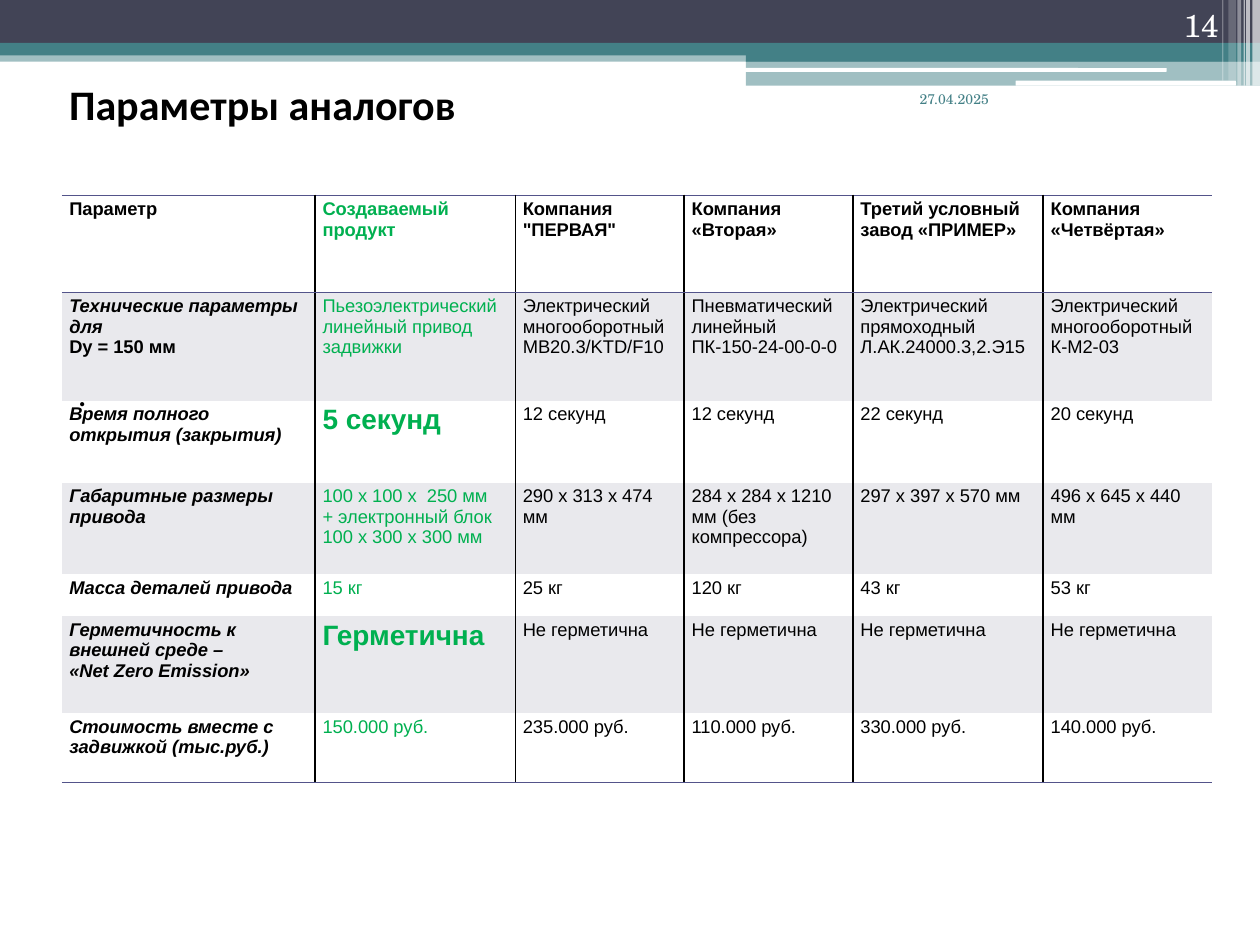
import pptx
import pptx.util
import pptx.dml.color
import pptx.enum.shapes
import pptx.enum.text
import pptx.oxml.ns
import lxml.etree
from dataclasses import dataclass

Inches, Pt = pptx.util.Inches, pptx.util.Pt
Kind = pptx.enum.shapes.MSO_SHAPE
Anchor = pptx.enum.text.MSO_ANCHOR
Align = pptx.enum.text.PP_ALIGN
qn = pptx.oxml.ns.qn


@dataclass
class Theme:
    dark: str = "424456"
    teal: str = "438086"
    white: str = "FFFFFF"
    black: str = "000000"
    green: str = "00B050"
    rule: str = "53548A"
    band: str = "E9E9ED"
    title: float = 24
    body: float = 20
    page: float = 18
    big: float = 16
    cell: float = 10.5
    date: float = 8
    head: str = "Calibri"
    sans: str = "Arial"
    serif: str = "TeX Gyre Schola"


def rgb(color):
    return pptx.dml.color.RGBColor.from_string(color)


class Deck:
    def __init__(self, slide, theme):
        self.slide, self.theme = slide, theme

    def style(self, para, face, size, color, bold=False, slant=False):
        font = para.font
        font.name, font.size = face, Pt(size)
        font.bold, font.italic = bold, slant
        font.color.rgb = rgb(color)

    def bar(self, box, color, alpha=100, kind=Kind.RECTANGLE):
        shape = self.slide.shapes.add_shape(kind, *map(Inches, box))
        shape.shadow.inherit = False
        shape.fill.solid()
        shape.fill.fore_color.rgb = rgb(color)
        shape.line.fill.background()
        if alpha < 100:
            tone = shape.fill._xPr.find(".//" + qn("a:srgbClr"))
            lxml.etree.SubElement(tone, qn("a:alpha"), val=str(alpha * 1000))

    def text(self, box, words, face, size, color, bold=False,
             anchor=Anchor.TOP, align=Align.LEFT, before=0):
        frame = self.slide.shapes.add_textbox(*map(Inches, box)).text_frame
        frame.word_wrap = True
        frame.vertical_anchor = anchor
        para = frame.paragraphs[0]
        para.text, para.alignment = words, align
        para.space_before = Pt(before)
        self.style(para, face, size, color, bold)

    def edges(self, cell, colors):
        """Draw the left, right, top and bottom borders; None hides one."""
        props = cell._tc.get_or_add_tcPr()
        for spot, (side, color) in enumerate(zip("LRTB", colors)):
            line = lxml.etree.Element(qn("a:ln" + side), w=str(Pt(1)))
            if color:
                fill = lxml.etree.SubElement(line, qn("a:solidFill"))
                lxml.etree.SubElement(fill, qn("a:srgbClr"), val=color)
            else:
                lxml.etree.SubElement(line, qn("a:noFill"))
            props.insert(spot, line)

    def table(self, left, top, wide, high, rows):
        t = self.theme
        frame = self.slide.shapes.add_table(
            len(rows), len(wide), Inches(left), Inches(top),
            Inches(sum(wide)), Inches(sum(high)))
        grid = frame.table
        grid.first_row = grid.horz_banding = False
        for col, size in zip(grid.columns, wide):
            col.width = Inches(size)
        for row, size in zip(grid.rows, high):
            row.height = Inches(size)
        for i, row in enumerate(rows):
            for j, words in enumerate(row):
                cell = grid.cell(i, j)
                cell.margin_left = cell.margin_right = Inches(0.06)
                cell.margin_top = cell.margin_bottom = Inches(0.03)
                if i % 2:
                    cell.fill.solid()
                    cell.fill.fore_color.rgb = rgb(t.band)
                else:
                    cell.fill.background()
                self.edges(cell, (
                    t.black if j else None,
                    t.black if j < len(wide) - 1 else None,
                    t.rule if i < 2 else None,
                    t.rule if i in (0, len(rows) - 1) else None))
                para = cell.text_frame.paragraphs[0]
                para.text = words
                key = j == 1 and i in (2, 5)
                self.style(para, t.sans, t.big if key else t.cell,
                           t.green if j == 1 else t.black,
                           bold=i == 0 or j == 0 or key,
                           slant=i > 0 and j == 0)
        return grid


ROWS = [
    ["Параметр", "Создаваемый продукт", "Компания \"ПЕРВАЯ\"",
     "Компания «Вторая»", "Третий условный завод «ПРИМЕР»",
     "Компания «Четвёртая»"],
    ["Технические параметры для \nDy = 150 мм",
     "Пьезоэлектрический линейный привод задвижки",
     "Электрический многооборотный MB20.3/KTD/F10",
     "Пневматический линейный \nПК-150-24-00-0-0",
     "Электрический  прямоходный Л.АК.24000.3,2.Э15",
     "Электрический многооборотный\nК-М2-03"],
    ["Время полного открытия (закрытия)", "5 секунд", "12 секунд",
     "12 секунд", "22 секунд", "20 секунд"],
    ["Габаритные размеры привода",
     "100 х 100 х  250 мм \n+ электронный блок 100 х 300 х 300 мм",
     "290 х 313 х 474 мм", "284 x 284 x 1210 мм (без компрессора)",
     "297 х 397 х 570 мм", "496 х 645 х 440 мм"],
    ["Масса деталей привода", "15 кг", "25 кг", "120 кг", "43 кг", "53 кг"],
    ["Герметичность к внешней среде – \n«Net Zero Emission»",
     "Герметична"] + ["Не герметична"] * 4,
    ["Стоимость вместе с задвижкой (тыс.руб.)", "150.000 руб.",
     "235.000 руб.", "110.000 руб.", "330.000 руб.", "140.000 руб."],
]


def main():
    prs = pptx.Presentation()
    prs.slide_width, prs.slide_height = Inches(10), Inches(7.5)
    t = Theme()
    deck = Deck(prs.slides.add_slide(prs.slide_layouts[6]), t)

    # Header bands
    deck.bar((0, 0.4, 10, 0.09), t.teal, 50)
    deck.bar((0, 0, 10, 0.34), t.dark)
    deck.bar((0, 0.34, 10, 0.1), t.teal)
    deck.bar((5.92, 0.39, 4.08, 0.1), t.teal)
    deck.bar((5.92, 0.48, 4.08, 0.2), t.teal, 50)
    for box in ((5.91, 0.54, 3.35, 0.03), (8.06, 0.64, 1.75, 0.04)):
        deck.bar(box, t.white, kind=Kind.ROUNDED_RECTANGLE)

    # Pale stripes at the right edge
    for left, wide, high, alpha in (
            (9.94, 0.06, 0.68, 65), (9.89, 0.03, 0.68, 65),
            (9.87, 0.01, 0.68, 60), (9.82, 0.03, 0.68, 40),
            (9.75, 0.06, 0.64, 20), (9.7, 0.01, 0.64, 30)):
        deck.bar((left, 0, wide, high), t.white, alpha)

    # Title, body, date and page number
    deck.text((0.45, 0.59, 3.52, 0.47), "Параметры аналогов", t.head,
              t.title, t.black, bold=True, anchor=Anchor.MIDDLE)
    deck.text((0.52, 2.9, 5.15, 2.5), ".", t.head, t.body, t.black, before=3)
    deck.text((7.2, 0.67, 1.05, 0.5), "27.04.2025", t.serif, t.date, t.teal)
    deck.text((8.94, 0, 0.83, 0.4), "14", t.serif, t.page, t.white,
              anchor=Anchor.BOTTOM, align=Align.RIGHT)

    # Comparison table
    grid = deck.table(0.49, 1.55, (2.01, 1.59, 1.34, 1.34, 1.51, 1.34),
                      (0.77, 0.86, 0.65, 0.73, 0.33, 0.77, 0.55), ROWS)
    bore = grid.cell(1, 0).text_frame.paragraphs[0].runs[1]
    bore.font.italic = False

    prs.save("out.pptx")


if __name__ == "__main__":
    main()
